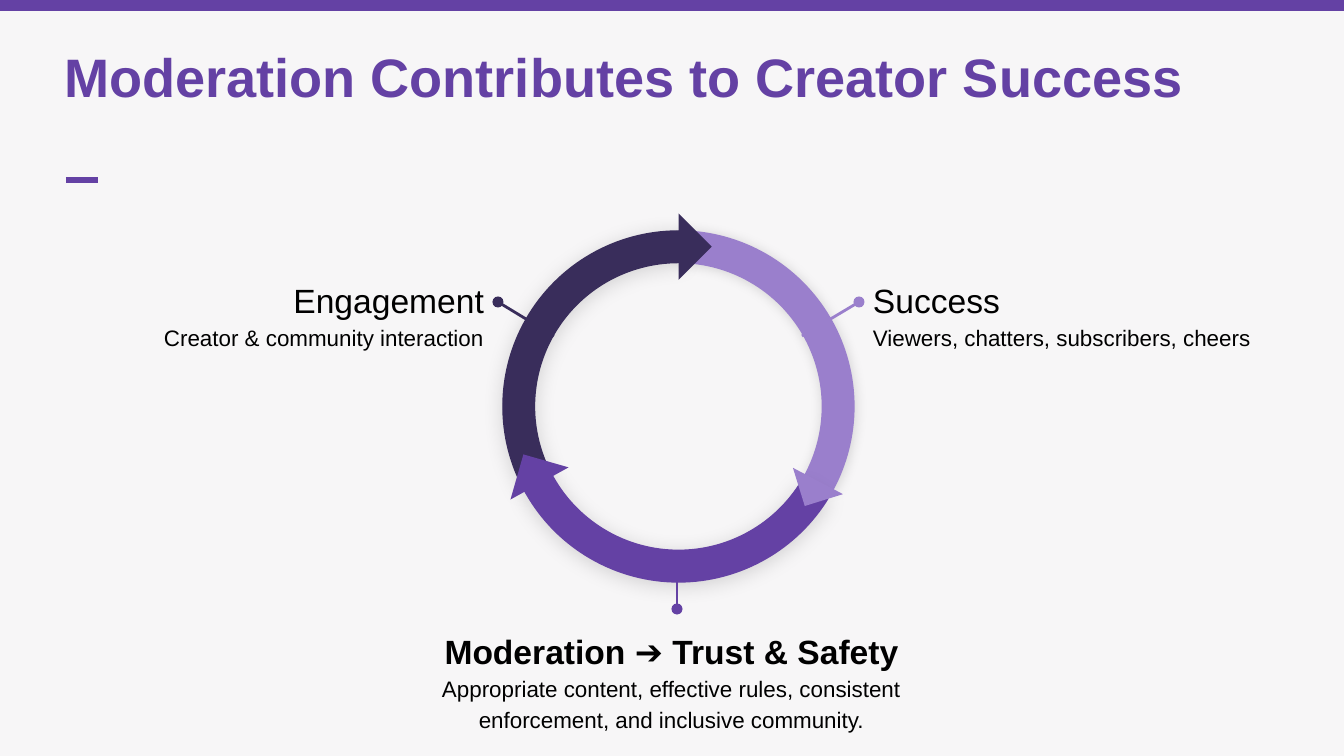
from dataclasses import dataclass

from lxml.etree import SubElement
from pptx import Presentation
from pptx.dml.color import RGBColor
from pptx.enum.shapes import MSO_CONNECTOR as Line, MSO_SHAPE as Preset
from pptx.enum.text import MSO_ANCHOR as Anchor, MSO_AUTO_SIZE as AutoSize, PP_ALIGN as Align
from pptx.oxml.ns import qn
from pptx.util import Emu, Pt


@dataclass(frozen=True)
class Theme:
    font: str = "Arial"
    background: str = "F7F6F7"
    purple: str = "6441A4"
    lilac: str = "9A7FCC"
    indigo: str = "392D5B"
    black: str = "000000"
    title_size: int = 29
    heading_size: int = 18
    detail_size: int = 12


THEME = Theme()
EMU_PER_PX = 914400 / 134.4
RING = (503, 231, 351, 351)


def px(*lengths):
    return [Emu(round(length * EMU_PER_PX)) for length in lengths]


def rgb(color):
    return RGBColor.from_string(color)


def add_solid(shapes, preset, box, color, rotation=0, outline=False):
    solid = shapes.add_shape(preset, *px(*box))
    solid.shadow.inherit = False
    solid.fill.solid()
    solid.fill.fore_color.rgb = rgb(color)
    solid.rotation = rotation
    if outline:
        solid.line.color.rgb = rgb(color)
        solid.line.width = Pt(0.75)
    else:
        solid.line.fill.background()
    return solid


def add_arc(shapes, color, rotation, start, end, blur, distance, flip=False):
    arc = add_solid(shapes, Preset.BLOCK_ARC, RING, color, rotation, outline=True)
    for index, value in enumerate((start, end, 0.09)):
        arc.adjustments[index] = value
    properties = arc._element.spPr
    if flip:
        properties.find(qn("a:xfrm")).set("flipH", "1")
    # Soft shadow straight below the ring
    shadow = SubElement(properties.find(qn("a:effectLst")), qn("a:outerShdw"),
                        blurRad=str(Pt(blur)), dist=str(Pt(distance)),
                        dir="5400000", algn="t", rotWithShape="0")
    tint = SubElement(shadow, qn("a:srgbClr"), val=THEME.black)
    SubElement(tint, qn("a:alpha"), val="15000")


def add_line(shapes, start, end, color, width, dot=False):
    line = shapes.add_connector(Line.STRAIGHT, *px(*start, *end))
    line.line.color.rgb = rgb(color)
    line.line.width = Pt(width)
    if dot:
        SubElement(line.line._get_or_add_ln(), qn("a:headEnd"), type="oval")
    SubElement(line._element.spPr, qn("a:effectLst"))


def write(paragraph, text, size, color=THEME.black, bold=False,
          align=Align.LEFT, spacing=1.15):
    paragraph.alignment = align
    paragraph.line_spacing = spacing
    run = paragraph.add_run()
    run.text = text
    run.font.name = THEME.font
    run.font.size = Pt(size)
    run.font.bold = bold
    run.font.color.rgb = rgb(color)


def set_frame(frame, side, top):
    frame.word_wrap = True
    frame.auto_size = AutoSize.NONE
    frame.vertical_anchor = Anchor.TOP
    frame.margin_left, frame.margin_right = px(side, side)
    frame.margin_top, frame.margin_bottom = px(top, top)


def add_title(slide, text):
    title = slide.shapes.title
    title.left, title.top, title.width, title.height = px(54, 46, 1220, 73)
    set_frame(title.text_frame, 10, 5)
    write(title.text_frame.paragraphs[0], text, THEME.title_size,
          color=THEME.purple, bold=True, spacing=0.9)


def add_callout(slide, box, align, heading, detail, color, dot, ring_point):
    callout = slide.shapes.add_group_shape().shapes
    add_line(callout, dot, ring_point, color, 1.5, dot=True)
    label = callout.add_textbox(*px(*box)).text_frame
    set_frame(label, 13, 13)
    for text, bold in heading:
        write(label.paragraphs[0], text, THEME.heading_size, bold=bold, align=align)
    write(label.add_paragraph(), detail, THEME.detail_size, align=align)


def main():
    deck = Presentation()
    deck.slide_width, deck.slide_height = px(1344, 756)
    slide = deck.slides.add_slide(deck.slide_layouts[5])
    slide.background.fill.solid()
    slide.background.fill.fore_color.rgb = rgb(THEME.background)
    shapes = slide.shapes

    # Top band, title and accent dash
    add_solid(shapes, Preset.RECTANGLE, (0, 0, 1344, 11), THEME.purple)
    add_line(shapes, (66, 180), (98, 180), THEME.purple, 3)
    add_title(slide, "Moderation Contributes to Creator Success")

    # Ring of three arcs
    add_arc(shapes, THEME.lilac, 30, 144.14, 215.07, 6.8, 0.8)
    add_arc(shapes, THEME.indigo, 330, 143.49, 214.73, 11.2, 1.5, flip=True)
    add_arc(shapes, THEME.purple, 210, 143.16, 215, 11.2, 1.5, flip=True)

    # Arrow tips
    for left, top, side, rotation, color in (
        (516, 460, 47, 106, THEME.purple),
        (798, 461, 40, 342.8, THEME.lilac),
        (655, 223, 47, 225, THEME.indigo),
    ):
        add_solid(shapes, Preset.RIGHT_TRIANGLE, (left, top, side, side), color, rotation)

    # Callouts around the ring
    add_callout(slide, (26, 261, 471, 87), Align.RIGHT, [("Engagement", False)],
                "Creator & community interaction",
                THEME.indigo, (498, 302), (554, 336))
    add_callout(slide, (860, 261, 414, 87), Align.LEFT, [("Success", False)],
                "Viewers, chatters, subscribers, cheers",
                THEME.lilac, (859, 302), (802, 336))
    add_callout(slide, (373, 612, 597, 87), Align.CENTER,
                [("Moderation ", True), ("➔", False), (" Trust & Safety", True)],
                "Appropriate content, effective rules, consistent enforcement, "
                "and inclusive community.",
                THEME.purple, (677, 609), (677, 550))

    deck.save("out.pptx")


if __name__ == "__main__":
    main()
